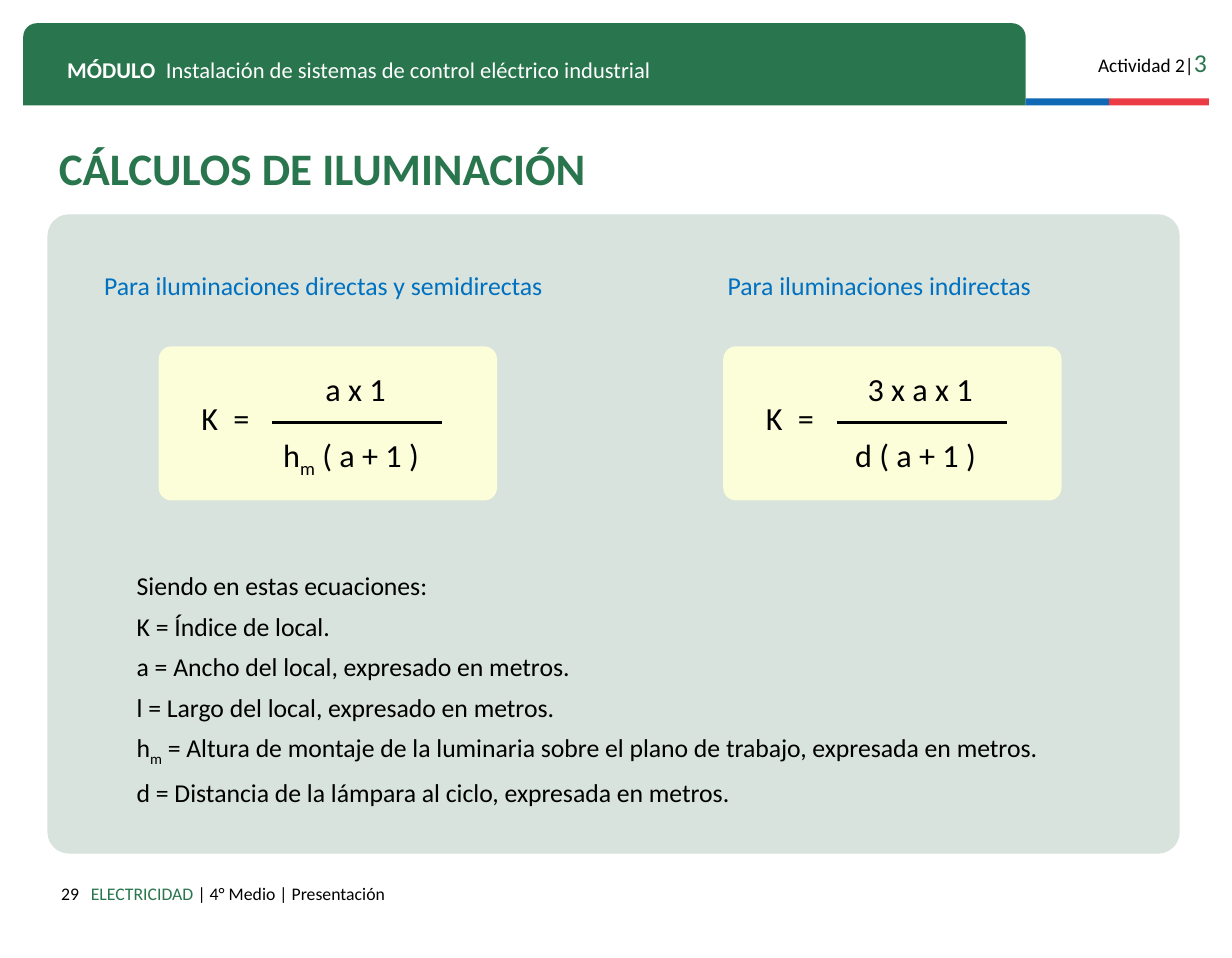
from lxml.etree import SubElement
from pptx import Presentation
from pptx.dml.color import RGBColor
from pptx.enum.shapes import MSO_CONNECTOR as Connector, MSO_SHAPE as Shape
from pptx.enum.text import MSO_ANCHOR as Anchor, PP_ALIGN as Align
from pptx.oxml.ns import qn
from pptx.util import Pt

GREEN = "29754D"
BLUE = "0070C0"
BLACK = "000000"
WHITE = "FFFFFF"


def colour(value):
    return RGBColor.from_string(value)


def add_panel(shapes, kind, left, top, width, height, fill, corners=()):
    panel = shapes.add_shape(kind, Pt(left), Pt(top), Pt(width), Pt(height))
    panel.shadow.inherit = False
    panel.fill.solid()
    panel.fill.fore_color.rgb = colour(fill)
    panel.line.fill.background()
    for index, corner in enumerate(corners):
        panel.adjustments[index] = corner


def add_text(shapes, left, top, width, height, margin=3.6):
    box = shapes.add_textbox(Pt(left), Pt(top), Pt(width), Pt(height))
    frame = box.text_frame
    frame.word_wrap = True
    frame.margin_left = frame.margin_right = Pt(7.2)
    frame.margin_top = frame.margin_bottom = Pt(margin)
    return frame


def add_span(para, text, size, fill=BLACK, bold=False, subscript=False):
    span = para.add_run()
    span.text = text
    span.font.name = "Calibri"
    span.font.size = Pt(size)
    span.font.bold = bold
    span.font.color.rgb = colour(fill)
    if subscript:
        span.font._element.set("baseline", "-25000")


def add_tab_stop(para, position):
    stops = SubElement(para._p.get_or_add_pPr(), qn("a:tabLst"))
    SubElement(stops, qn("a:tab"), pos=str(Pt(position)), algn="l")


def add_symbols(para, symbols, size):
    for text, subscript in symbols:
        add_span(para, text, size, subscript=subscript)


def add_rule(shapes, left, right, y):
    rule = shapes.add_connector(Connector.STRAIGHT, Pt(left), Pt(y), Pt(right), Pt(y))
    rule.line.color.rgb = colour(BLACK)
    rule.line.width = Pt(1.75)
    SubElement(rule._element.spPr, qn("a:effectLst"))


def add_formula(page, left, numerator, denominator):
    add_panel(page.shapes, Shape.ROUNDED_RECTANGLE, left, 215.3, 210.2, 95.8, "FBFED9", [0.083])
    group = page.shapes.add_group_shape().shapes
    para = add_text(group, left + 19.4, 244.1, 50, 31.7).paragraphs[0]
    add_tab_stop(para, 19.9)
    add_span(para, "K\t=", 20)
    rows = [(69.8, 226.1, 105.1, numerator), (63.4, 267.1, 112.3, denominator)]
    for offset, top, width, symbols in rows:
        para = add_text(group, left + offset, top, width, 31.7).paragraphs[0]
        para.alignment = Align.CENTER
        add_symbols(para, symbols, 20)
    add_rule(group, left + 70.6, left + 176, 262.8)


def add_header(page):
    add_panel(page.shapes, Shape.ROUND_2_SAME_RECTANGLE, 14.4, 14.4, 622.8, 51.1, GREEN, [0.167, 0])
    add_panel(page.shapes, Shape.RECTANGLE, 637.2, 61.2, 51.8, 4.3, "0F69B4")
    add_panel(page.shapes, Shape.RECTANGLE, 689, 61.2, 62, 4.3, "EB3C46")
    para = add_text(page.shapes, 664.6, 21.6, 92.2, 27.4, 7.2).paragraphs[0]
    para.alignment = Align.RIGHT
    add_span(para, "Actividad 2|", 12)
    add_span(para, "3", 16, GREEN)
    para = add_text(page.shapes, 34.6, 27.4, 586, 25.2, 7.2).paragraphs[0]
    add_tab_stop(para, 61.4)
    add_span(para, "MÓDULO", 14, WHITE, bold=True)
    add_span(para, "\tInstalación de sistemas de control eléctrico industrial", 14, WHITE)


def add_footer(page):
    para = add_text(page.shapes, 14.4, 542.2, 41.8, 20.9, 7.2).paragraphs[0]
    para.alignment = Align.RIGHT
    add_span(para, "29", 11)
    para = add_text(page.shapes, 49.3, 542.2, 514.4, 27.4, 7.2).paragraphs[0]
    add_span(para, "ELECTRICIDAD ", 11, GREEN)
    add_span(para, "| 4° Medio | Presentación", 11)


def add_title(page):
    frame = add_text(page.shapes, 29.5, 92.9, 627.8, 28.1, 7.2)
    frame.vertical_anchor = Anchor.MIDDLE
    para = frame.paragraphs[0]
    para.line_spacing = 0.8
    add_span(para, "CÁLCULOS DE ILUMINACIÓN", 28, GREEN, bold=True)


def add_legend(page):
    lines = [
        [("Siendo en estas ecuaciones:", False)],
        [("K = Índice de local.", False)],
        [("a = Ancho del local, expresado en metros.", False)],
        [("l = Largo del local, expresado en metros.", False)],
        [("h", False), ("m", True),
         (" = Altura de montaje de la luminaria sobre el plano de trabajo, expresada en metros.", False)],
        [("d = Distancia de la lámpara al ciclo, expresada en metros.", False)],
    ]
    frame = add_text(page.shapes, 77.8, 350.6, 589.7, 159.8)
    for index, symbols in enumerate(lines):
        para = frame.add_paragraph() if index else frame.paragraphs[0]
        para.space_before = Pt(6)
        add_symbols(para, symbols, 16)


def main():
    deck = Presentation()
    deck.slide_width, deck.slide_height = Pt(765.36), Pt(595.44)
    page = deck.slides.add_slide(deck.slide_layouts[6])
    add_header(page)
    add_footer(page)
    add_title(page)
    add_panel(page.shapes, Shape.ROUNDED_RECTANGLE, 29.5, 133.2, 703.4, 397.4, "D7E3DC", [0.034])
    headings = [
        (57.6, 315.4, "Para iluminaciones directas y semidirectas"),
        (445, 205.2, "Para iluminaciones indirectas"),
    ]
    for left, width, text in headings:
        para = add_text(page.shapes, left, 164.2, width, 26.6).paragraphs[0]
        add_span(para, text, 16, BLUE)
    add_formula(page, 98.6, [("a x 1", False)], [("h", False), ("m", True), (" ( a + 1 )", False)])
    add_formula(page, 449.3, [("3 x a x 1", False)], [("d ( a + 1 )", False)])
    add_legend(page)
    deck.save("out.pptx")


if __name__ == "__main__":
    main()
